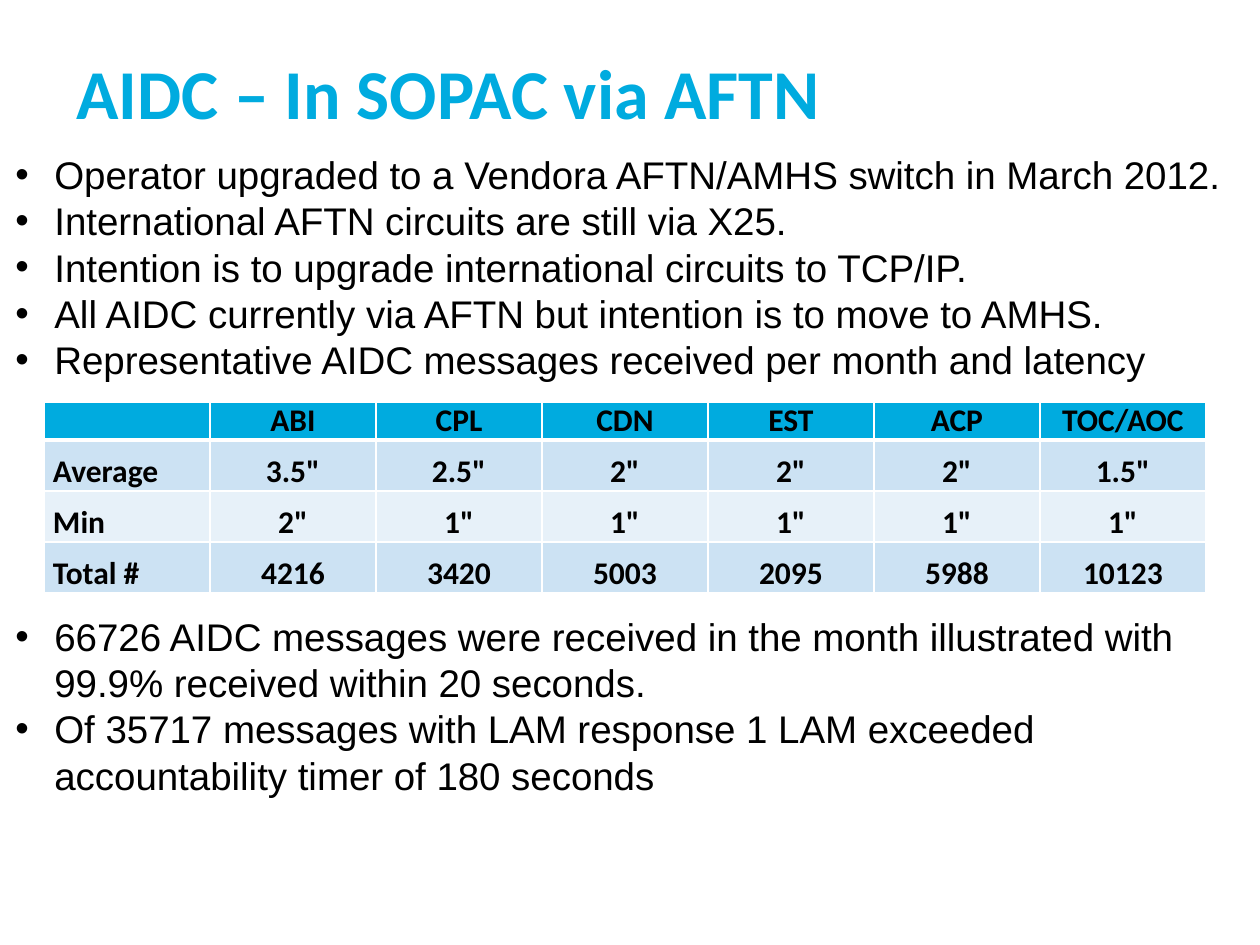
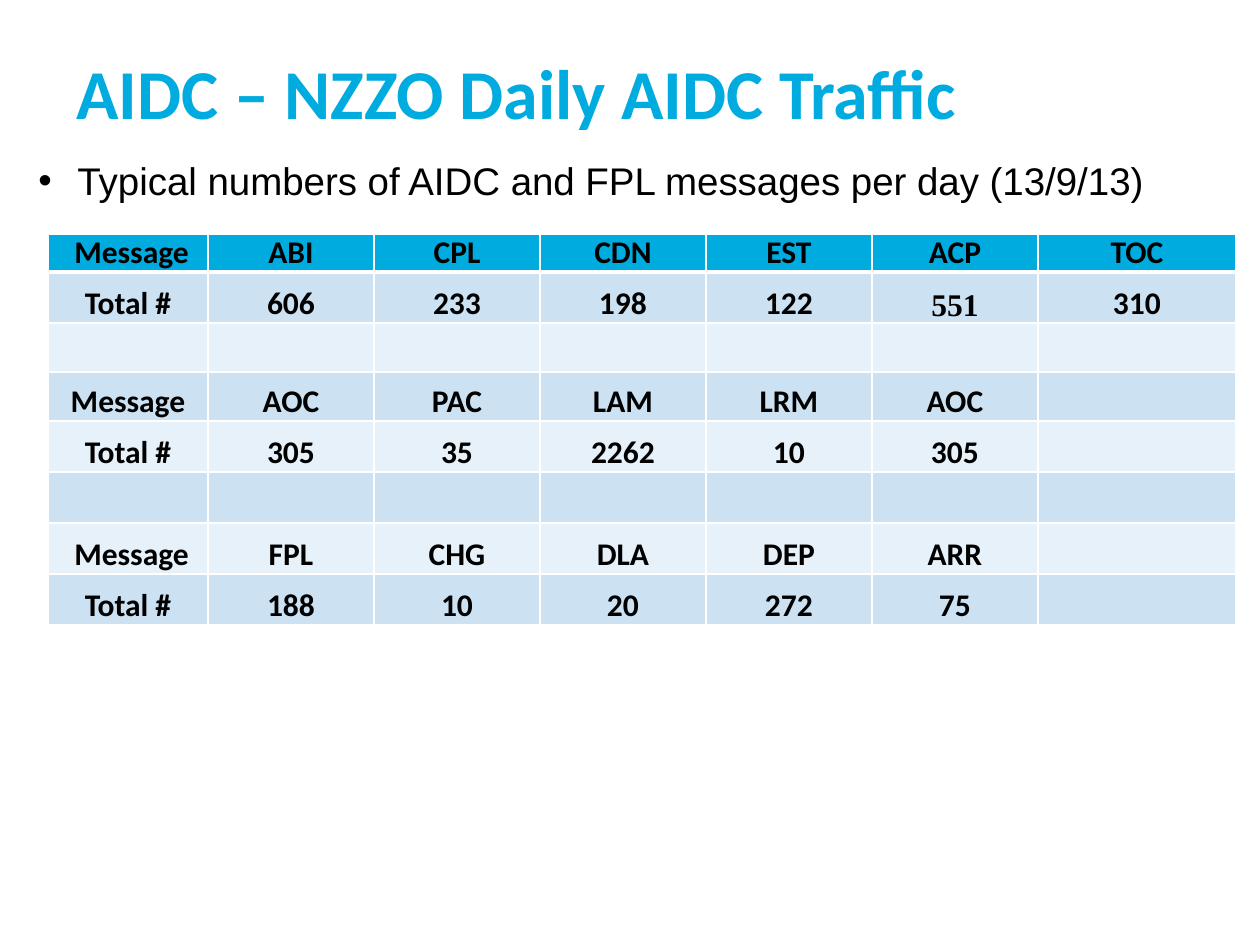
"""Builds two slides on AIDC message traffic."""
from lxml import etree
from pptx import Presentation
from pptx import util as u
from pptx.dml.color import RGBColor
from pptx.enum import text
from pptx.oxml import ns

PX = 914400 // 126
CYAN = RGBColor(0x00, 0xAB, 0xDF)
BLACK = RGBColor(0x00, 0x00, 0x00)
WHITE = RGBColor(0xFF, 0xFF, 0xFF)
BAND_DARK = RGBColor(0xCC, 0xE2, 0xF3)
BAND_LIGHT = RGBColor(0xE7, 0xF1, 0xF9)
BULLET_LINE = 26.4


def px(length):
    """Turns whole px into EMU."""
    return u.Emu(length * PX)


def write(paragraph, words, size, font="Calibri", color=BLACK, bold=False, align=text.PP_ALIGN.LEFT):
    """Adds one formatted run to a paragraph."""
    paragraph.alignment = align
    run = paragraph.add_run()
    run.text = words
    run.font.size = u.Pt(size)
    run.font.name = font
    run.font.bold = bold
    run.font.color.rgb = color


def add_bullet(paragraph, indent):
    """Gives a paragraph a round bullet with a hanging indent."""
    properties = paragraph._p.get_or_add_pPr()
    properties.set("marL", str(px(indent)))
    properties.set("indent", str(-px(indent)))
    etree.SubElement(properties, ns.qn("a:buFont"), typeface="Arial")
    etree.SubElement(properties, ns.qn("a:buChar"), char="•")


def add_border(cell, side, points):
    """Draws one white edge of a cell."""
    edge = etree.SubElement(cell._tc.get_or_add_tcPr(), ns.qn(f"a:ln{side}"), w=str(u.Pt(points)))
    fill = etree.SubElement(edge, ns.qn("a:solidFill"))
    etree.SubElement(fill, ns.qn("a:srgbClr"), val=str(WHITE))


class Deck:
    """Holds the shared style and the current slide."""

    def __init__(self):
        self.presentation = Presentation()
        self.presentation.slide_width = u.Inches(10)
        self.presentation.slide_height = u.Inches(7.5)
        self.slide = None

    def start_slide(self, title):
        """Adds a blank slide with its title."""
        self.slide = self.presentation.slides.add_slide(self.presentation.slide_layouts[6])
        frame = self.text_frame(64, 37, 1134, 108)
        frame.vertical_anchor = text.MSO_ANCHOR.MIDDLE
        write(frame.paragraphs[0], title, 40, color=CYAN, bold=True)

    def text_frame(self, left, top, width, height):
        """Adds a wrapping text box and returns its frame."""
        frame = self.slide.shapes.add_textbox(px(left), px(top), px(width), px(height)).text_frame
        frame.word_wrap = True
        return frame

    def bullets(self, left, top, width, height, points, gap_at=None, gap_lines=0):
        """Adds a bullet list, with an optional gap before one point."""
        frame = self.text_frame(left, top, width, height)
        for index, point in enumerate(points):
            paragraph = frame.add_paragraph() if index else frame.paragraphs[0]
            paragraph.line_spacing = u.Pt(BULLET_LINE)
            if index == gap_at:
                paragraph.space_before = u.Pt(gap_lines * BULLET_LINE)
            add_bullet(paragraph, 39)
            write(paragraph, point, 22, font="Arial")

    def table(self, left, top, widths, heights, rows, label_align, fonts=None):
        """Adds a banded table; fonts maps (row, column) to a font."""
        table = self.slide.shapes.add_table(
            len(rows), len(widths), px(left), px(top), px(sum(widths)), px(sum(heights))).table
        for column, width in zip(table.columns, widths):
            column.width = px(width)
        for r, (row, height) in enumerate(zip(rows, heights)):
            table.rows[r].height = px(height)
            band = CYAN if r == 0 else BAND_DARK if r % 2 else BAND_LIGHT
            for c, words in enumerate(row):
                align = text.PP_ALIGN.CENTER if c else label_align
                self.cell(table.cell(r, c), words, r, band, align, (fonts or {}).get((r, c), "Calibri"))

    def cell(self, cell, words, row, band, align, font):
        """Styles and fills one table cell."""
        cell.margin_left = cell.margin_right = px(9)
        cell.margin_top = cell.margin_bottom = 0
        cell.vertical_anchor = text.MSO_ANCHOR.BOTTOM
        for side in "LRTB":
            under_header = (row, side) in ((0, "B"), (1, "T"))
            add_border(cell, side, 3 if under_header else 1)
        cell.fill.solid()
        cell.fill.fore_color.rgb = band
        if words:
            write(cell.text_frame.paragraphs[0], words, 18, font=font, bold=True, align=align)


def main():
    """Builds and saves the slides."""
    deck = Deck()

    deck.start_slide("AIDC – In SOPAC via AFTN")
    deck.bullets(3, 145, 1244, 665, [
        "Operator upgraded to a Vendora AFTN/AMHS switch in March 2012.",
        "International AFTN circuits are still via X25.",
        "Intention is to upgrade international circuits to TCP/IP.",
        "All AIDC currently via AFTN but intention is to move to AMHS.",
        "Representative AIDC messages received per month and latency",
        "66726 AIDC messages were received in the month illustrated with 99.9% received within 20 seconds.",
        "Of 35717 messages with LAM response 1 LAM exceeded accountability timer of 180 seconds",
    ], gap_at=5, gap_lines=5)
    latency = [
        ["", "ABI", "CPL", "CDN", "EST", "ACP", "TOC/AOC"],
        ["Average", '3.5"', '2.5"', '2"', '2"', '2"', '1.5"'],
        ["Min", '2"', '1"', '1"', '1"', '1"', '1"'],
        ["Total #", "4216", "3420", "5003", "2095", "5988", "10123"],
    ]
    deck.table(44, 402, [166] * 7, [38] + [51] * 3, latency, text.PP_ALIGN.LEFT)

    deck.start_slide("AIDC – NZZO Daily AIDC Traffic")
    daily_traffic = [
        [" Message", "ABI", "CPL", "CDN", "EST", "ACP", "TOC"],
        ["Total #", "606", "233", "198", "122", "551", "310"],
        [""] * 7,
        ["Message", "AOC", "PAC", "LAM", "LRM", "AOC", ""],
        ["Total #", "305", "35", "2262", "10", "305", ""],
        [""] * 7,
        [" Message", "FPL", "CHG", "DLA", "DEP", "ARR", ""],
        ["Total #", "188", "10", "20", "272", "75", ""],
    ]
    deck.table(48, 234, [160] + [166] * 5 + [198], [38, 51, 49, 49] + [51] * 4, daily_traffic,
               text.PP_ALIGN.CENTER, fonts={(1, 5): "Times New Roman"})
    deck.bullets(26, 151, 1208, 59, ["Typical numbers of AIDC and FPL messages per day (13/9/13)"])

    deck.presentation.save("out.pptx")


if __name__ == "__main__":
    main()
